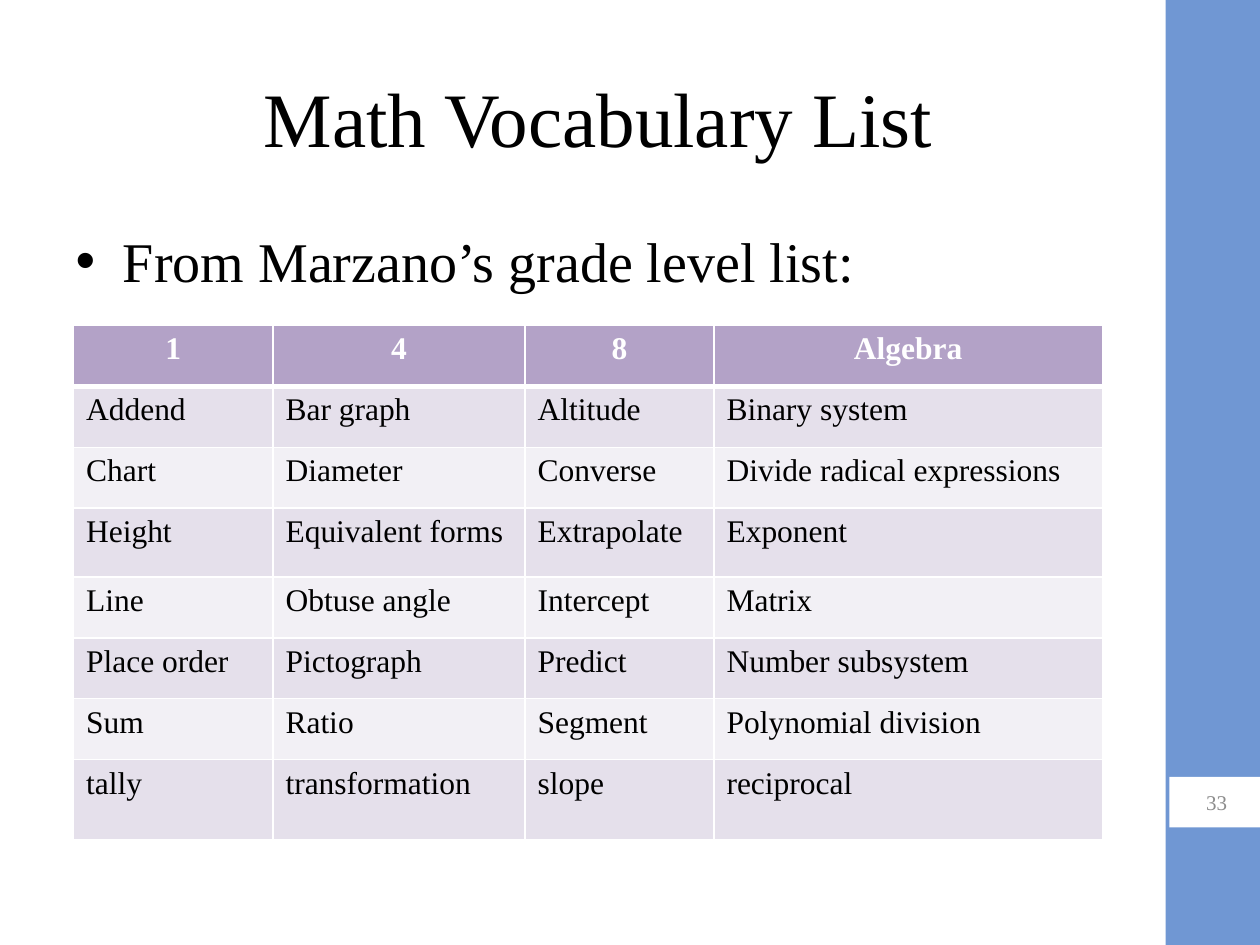
"""Build the math vocabulary slide with its table of grade level words."""
import lxml.etree
import pptx
import pptx.dml.color
import pptx.enum.shapes
import pptx.enum.text
import pptx.oxml
import pptx.oxml.ns
import pptx.util

Pt = pptx.util.Pt
CENTER = pptx.enum.text.PP_ALIGN.CENTER
RECTANGLE = pptx.enum.shapes.MSO_SHAPE.RECTANGLE


def color(hex_string):
    """Return the colour of a hex string."""
    return pptx.dml.color.RGBColor.from_string(hex_string)


def write(frame, text, size, text_color, align=None, bold=None):
    """Put one formatted paragraph in a text frame."""
    para = frame.paragraphs[0]
    para.text = text
    para.alignment = align
    para.font.name = "Times New Roman"
    para.font.size = Pt(size)
    para.font.bold = bold
    para.font.color.rgb = color(text_color)


deck = pptx.Presentation()
deck.slide_width, deck.slide_height = Pt(720), Pt(540)
slide = deck.slides.add_slide(deck.slide_layouts[1])
title, body = slide.placeholders

for box, top, height, text, size, align in (
    (title, 21.6, 90, "Math Vocabulary List", 44, CENTER),
    (body, 126, 356.4, "From Marzano’s grade level list:", 32, None),
):
    box.left, box.top, box.width, box.height = Pt(36), Pt(top), Pt(612), Pt(height)
    write(box.text_frame, text, size, "000000", align)

for left, top, height, fill, text in (
    (666, 0, 540, "7097D3", ""),
    (668.2, 444, 28.8, "FFFFFF", "33"),
):
    box = slide.shapes.add_shape(RECTANGLE, Pt(left), Pt(top), Pt(54), Pt(height))
    box.shadow.inherit = False
    box.fill.solid()
    box.fill.fore_color.rgb = color(fill)
    box.line.fill.background()
    if text:
        box.text_frame.vertical_anchor = pptx.enum.text.MSO_ANCHOR.MIDDLE
        write(box.text_frame, text, 12, "8C8C8C", CENTER)

words = [
    ("1", "4", "8", "Algebra"),
    ("Addend", "Bar graph", "Altitude", "Binary system"),
    ("Chart", "Diameter", "Converse", "Divide radical expressions"),
    ("Height", "Equivalent forms", "Extrapolate", "Exponent"),
    ("Line", "Obtuse angle", "Intercept", "Matrix"),
    ("Place order", "Pictograph", "Predict", "Number subsystem"),
    ("Sum", "Ratio", "Segment", "Polynomial division"),
    ("tally", "transformation", "slope", "reciprocal"),
]
column_widths = [114, 144, 108, 222]
row_heights = [34.8, 34.8, 34.8, 39.4, 34.8, 34.8, 34.8, 45.8]
table = slide.shapes.add_table(
    len(words), len(column_widths), Pt(42), Pt(186),
    Pt(sum(column_widths)), Pt(sum(row_heights)),
).table
for column, width in zip(table.columns, column_widths):
    column.width = Pt(width)

for index, (row, height, row_words) in enumerate(zip(table.rows, row_heights, words)):
    row.height = Pt(height)
    header = index == 0
    fill = "B3A2C7" if header else ("F2F0F5", "E5E0EB")[index % 2]
    for cell, word in zip(row.cells, row_words):
        properties = cell._tc.get_or_add_tcPr()
        for side in "LRTB":
            thick = (header and side == "B") or (index == 1 and side == "T")
            properties.append(pptx.oxml.parse_xml(
                f'<a:ln{side} {pptx.oxml.ns.nsdecls("a")} w="{Pt(3 if thick else 1)}">'
                f'<a:solidFill><a:srgbClr val="FFFFFF"/></a:solidFill></a:ln{side}>'
            ))
        cell.fill.solid()
        cell.fill.fore_color.rgb = color(fill)
        write(cell.text_frame, word, 18, "FFFFFF" if header else "000000",
              CENTER if header else None, header)

deck.save("out.pptx")
